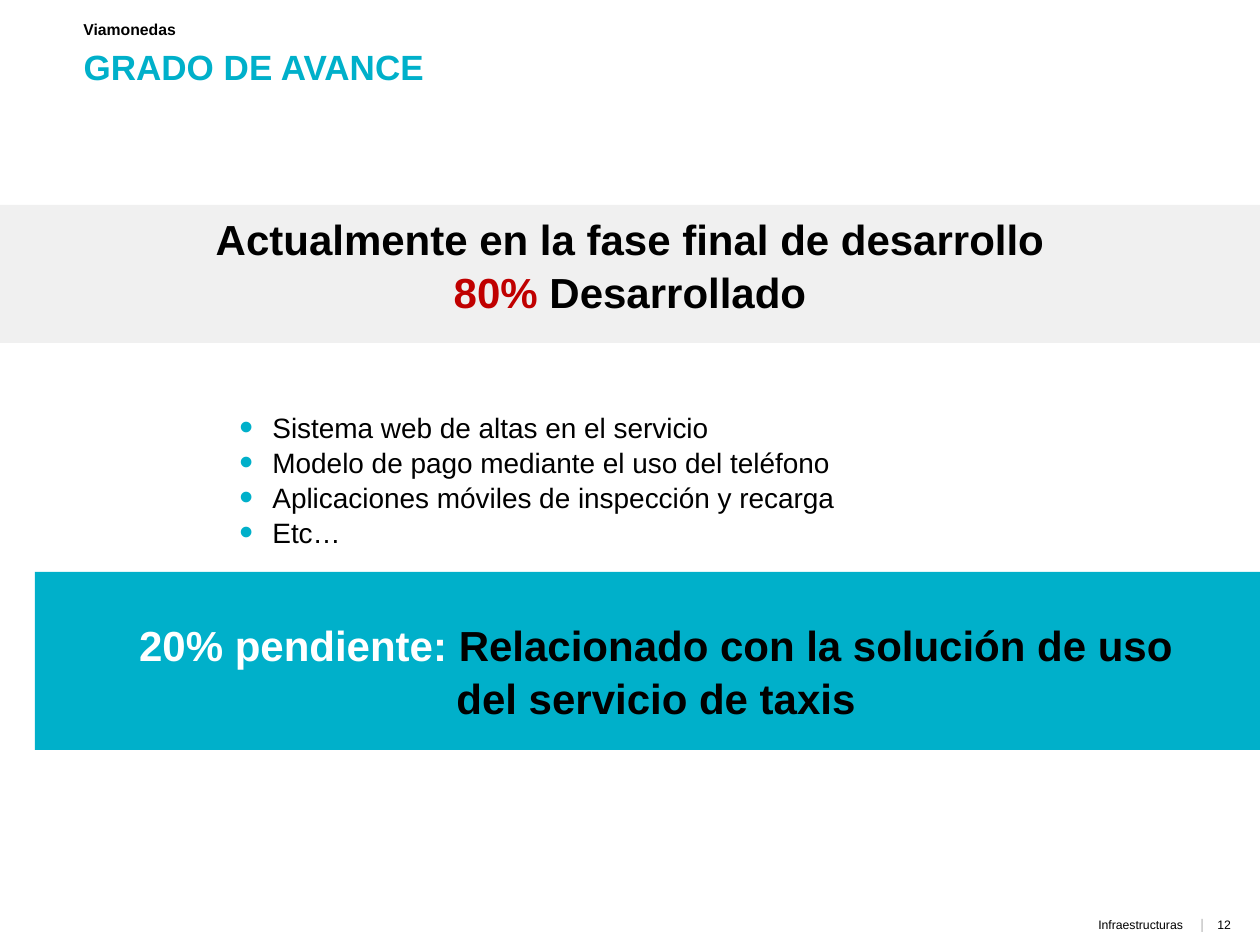
from lxml import etree
from pptx import Presentation
from pptx import util as u
from pptx.dml.color import RGBColor
from pptx.enum import shapes, text
from pptx.oxml.ns import qn

TEAL, BLACK, WHITE = "00B0CA", "000000", "FFFFFF"
LEFT, MID, RIGHT = text.PP_ALIGN.LEFT, text.PP_ALIGN.CENTER, text.PP_ALIGN.RIGHT
TOP, CENTER = text.MSO_ANCHOR.TOP, text.MSO_ANCHOR.MIDDLE


def px(n):
    return u.Emu(round(n * 914400 / 126))


def write(shape, lines, size, color=BLACK, bold=False, align=LEFT,
          anchor=TOP, inset=None, space=None, bullet=False):
    """Fill a shape with lines, each a list of (words, color or None) runs."""
    frame = shape.text_frame
    frame.word_wrap = True
    frame.auto_size = text.MSO_AUTO_SIZE.NONE
    frame.vertical_anchor = anchor
    if inset is not None:
        frame.margin_left = frame.margin_right = inset
        frame.margin_top = frame.margin_bottom = inset
    for i, runs in enumerate(lines):
        para = frame.add_paragraph() if i else frame.paragraphs[0]
        para.alignment = align
        if space:
            para.line_spacing = space
        if bullet:
            para.level = 1
            props = para._p.get_or_add_pPr()
            props.set("marL", str(px(137)))
            props.set("indent", str(px(-33)))
            tint = etree.SubElement(props, qn("a:buClr"))
            etree.SubElement(tint, qn("a:srgbClr"), val=TEAL)
            etree.SubElement(props, qn("a:buSzPct"), val="140000")
            etree.SubElement(props, qn("a:buFont"), typeface="Arial")
            etree.SubElement(props, qn("a:buChar"), char="•")
        for words, tone in runs:
            run = para.add_run()
            run.text = words
            run.font.name = "Arial"
            run.font.size = u.Pt(size)
            run.font.bold = bold
            run.font.color.rgb = RGBColor.from_string(tone or color)


deck = Presentation()
deck.slide_width, deck.slide_height = px(1260), px(945)
slide = deck.slides.add_slide(deck.slide_layouts[5])

# Heading
title = slide.shapes.title
title.left, title.top, title.width, title.height = map(px, (71, 39, 1145, 86))
write(title, [[("GRADO DE AVANCE", None)]], 20, color=TEAL, bold=True)

# Bands
bands = []
for box, fill in [((0, 205, 1260, 138), "F0F0F0"), ((35, 572, 1225, 178), TEAL)]:
    band = slide.shapes.add_shape(shapes.MSO_SHAPE.RECTANGLE, *map(px, box))
    band.shadow.inherit = False
    band.fill.solid()
    band.fill.fore_color.rgb = RGBColor.from_string(fill)
    band.line.fill.background()
    bands.append(band)

write(bands[0], [[("Actualmente en la fase final de desarrollo", None)],
                 [("80%", "C00000"), (" Desarrollado", None)]],
      24, bold=True, align=MID, space=1.05)

# Text boxes
items = ["Sistema web de altas en el servicio",
         "Modelo de pago mediante el uso del teléfono",
         "Aplicaciones móviles de inspección y recarga",
         "Etc…"]
pending = [("20% pendiente:", WHITE),
           (" Relacionado con la solución de uso del servicio de taxis", None)]
foot = dict(anchor=CENTER, align=RIGHT, inset=0)
notes = [
    ((71, 16, 1144, 27), [[("Viamonedas", None)]], 9,
     dict(bold=True, anchor=CENTER)),
    ((123, 403, 1062, 149), [[(item, None)] for item in items], 16,
     dict(bullet=True, space=1.04)),
    ((105, 611, 1102, 115), [pending], 24,
     dict(bold=True, align=MID, space=1.05)),
    ((430, 915, 753, 20), [[("Infraestructuras", None)]], 7, foot),
    ((1194, 914, 10, 20), [[("|", None)]], 8, dict(foot, color="B6B6B6")),
    ((1205, 911, 55, 30), [[("12", None)]], 7, {}),
]
for box, lines, size, style in notes:
    write(slide.shapes.add_textbox(*map(px, box)), lines, size, **style)

deck.save("out.pptx")
